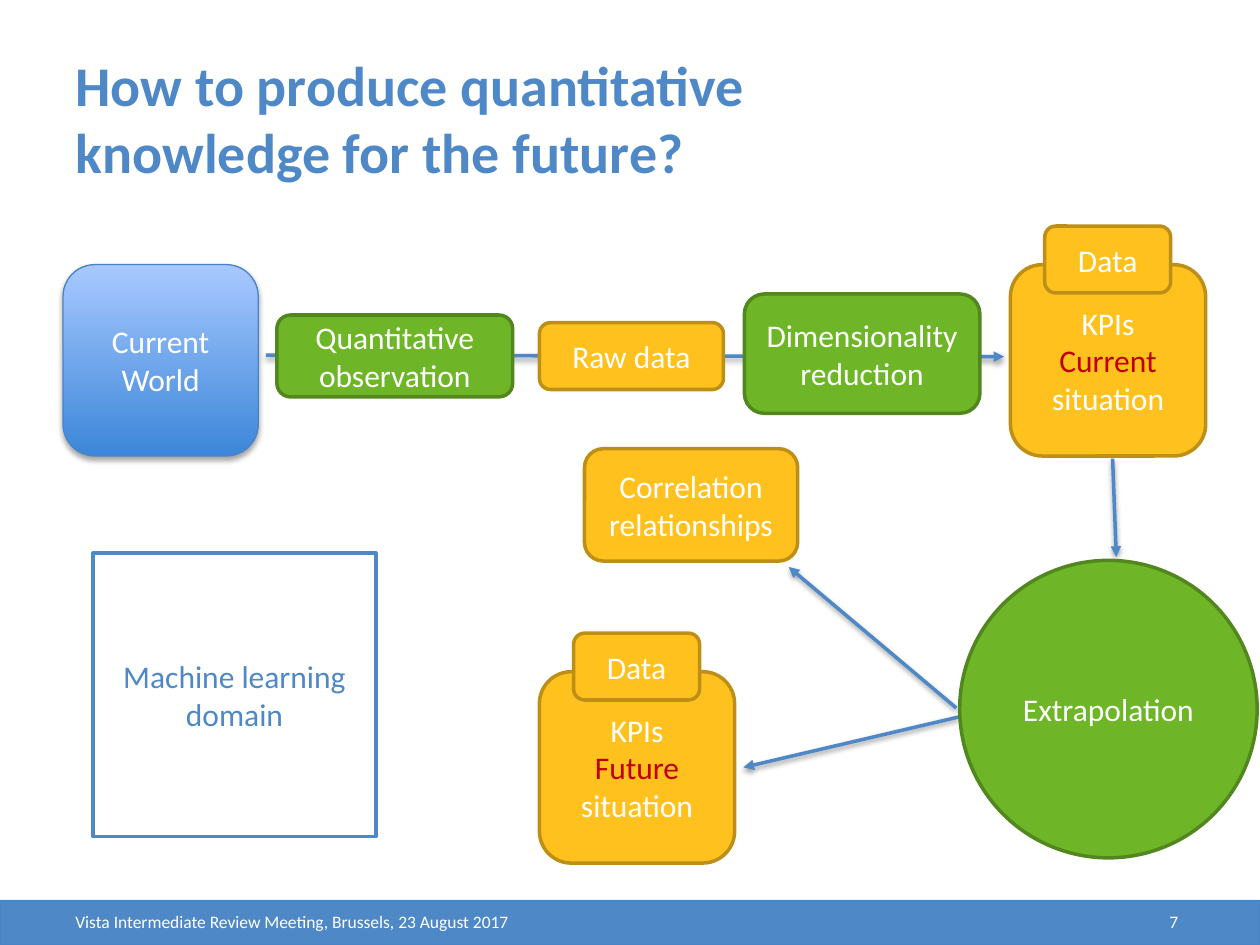
"""Build the slide on producing quantitative knowledge for the future."""
from dataclasses import dataclass

from lxml import etree
from pptx import Presentation
from pptx.dml.color import RGBColor
from pptx.enum.shapes import MSO_CONNECTOR, MSO_SHAPE
from pptx.enum.text import MSO_ANCHOR, PP_ALIGN
from pptx.oxml.ns import qn
from pptx.util import Pt

RECT, ROUND, OVAL = MSO_SHAPE.RECTANGLE, MSO_SHAPE.ROUNDED_RECTANGLE, MSO_SHAPE.OVAL
STRAIGHT = MSO_CONNECTOR.STRAIGHT
LEFT, CENTER, RIGHT = PP_ALIGN.LEFT, PP_ALIGN.CENTER, PP_ALIGN.RIGHT
MIDDLE = MSO_ANCHOR.MIDDLE

BLUE, BLUE_EDGE, WHITE, RED = "4E88C7", "4985C6", "FFFFFF", "C00000"
GREEN, GREEN_EDGE = "6EB628", "51871E"
AMBER, AMBER_EDGE = "FFC11E", "BD8F16"
WORLD_STOPS = ("3C87D9", "A8C8FF")


@dataclass
class Box:
    """A labelled shape, with an optional accented word."""
    at: tuple[float, float, float, float]
    text: str = ""
    fill: str | tuple[str, str] = AMBER
    edge: str = AMBER_EDGE
    kind: int = ROUND
    color: str = WHITE
    accent: str = ""
    weight: float = 2
    shadow: bool = False


@dataclass
class Arrow:
    """A straight arrow between two points."""
    start: tuple[float, float]
    end: tuple[float, float]


def rgb(value: str) -> RGBColor:
    """Turn a hex string into a colour."""
    return RGBColor.from_string(value)


def add_run(p, text: str, color: str, size: float, bold: bool = False) -> None:
    """Append a formatted run to a paragraph."""
    r = p.add_run()
    r.text = text
    for name, value in {"name": "Calibri", "size": Pt(size), "bold": bold}.items():
        setattr(r.font, name, value)
    r.font.color.rgb = rgb(color)


def add_shadow(effects, alpha: int, dist: float) -> None:
    """Put a soft downward shadow in an effect list."""
    shadow = etree.SubElement(effects, qn("a:outerShdw"), blurRad=str(Pt(3.1)),
                              dist=str(Pt(dist)), dir="5400000", rotWithShape="0")
    color = etree.SubElement(shadow, qn("a:srgbClr"), val="000000")
    etree.SubElement(color, qn("a:alpha"), val=str(alpha * 1000))


def draw_box(shapes, box: Box) -> None:
    """Draw a filled shape with its centred label."""
    sp = shapes.add_shape(box.kind, *map(Pt, box.at))
    sp.shadow.inherit = False
    if isinstance(box.fill, str):
        sp.fill.solid()
        sp.fill.fore_color.rgb = rgb(box.fill)
    else:
        sp.fill.gradient()
        sp.fill.gradient_angle = 90
        for stop, color in zip(sp.fill.gradient_stops, box.fill):
            stop.color.rgb = rgb(color)
    sp.line.color.rgb = rgb(box.edge)
    sp.line.width = Pt(box.weight)
    if box.shadow:
        add_shadow(sp._element.spPr.find(qn("a:effectLst")), 35, 1.8)
    if not box.text:
        return
    tf = sp.text_frame
    tf.word_wrap, tf.vertical_anchor = True, MIDDLE
    for i, line in enumerate(box.text.split("\n")):
        p = tf.add_paragraph() if i else tf.paragraphs[0]
        p.alignment = CENTER
        if box.accent and line.startswith(box.accent):
            add_run(p, box.accent, RED, 18)
            line = line.removeprefix(box.accent)
        add_run(p, line, box.color, 18)


def draw_arrow(shapes, arrow: Arrow) -> None:
    """Draw a blue arrow with a shadow."""
    cxn = shapes.add_connector(STRAIGHT, *map(Pt, arrow.start + arrow.end))
    cxn.line.color.rgb = rgb(BLUE)
    cxn.line.width = Pt(2)
    etree.SubElement(cxn.line._get_or_add_ln(), qn("a:tailEnd"), type="triangle")
    add_shadow(etree.SubElement(cxn._element.spPr, qn("a:effectLst")), 38, 1.6)


def draw_footer(shapes, text: str, left: float, width: float, align: int) -> None:
    """Write a line of text on the footer bar."""
    tf = shapes.add_textbox(*map(Pt, (left, 516.2, width, 20.2))).text_frame
    tf.word_wrap, tf.vertical_anchor = True, MIDDLE
    tf.paragraphs[0].alignment = align
    add_run(tf.paragraphs[0], text, WHITE, 10)


def kpi_boxes(x: float, y: float, period: str) -> list[Box]:
    """Return a KPI box and the data tab on its top edge."""
    return [Box((x, y, 111.6, 109.4), f"KPIs\n{period} situation", accent=period),
            Box((x + 19.6, y - 22, 72, 38.2), "Data")]


ARROWS = [
    Arrow((151.9, 203), (573.8, 203.8)),
    Arrow((635.8, 262.1), (637.9, 318.2)),
    Arrow((547.9, 409.7), (424.8, 438.5)),
    Arrow((546.5, 404.6), (450.7, 324)),
]
BOXES = [
    Box((36, 151.2, 111.6, 109.4), "Current\nWorld", WORLD_STOPS, BLUE_EDGE,
        weight=0.75, shadow=True),
    *kpi_boxes(577.4, 151.2, "Current"),
    Box((548.4, 320.2, 170, 170), "Extrapolation", GREEN, GREEN_EDGE, OVAL),
    *kpi_boxes(308.2, 383.8, "Future"),
    Box((158.2, 180, 134.8, 46.8), "Quantitative observation", GREEN, GREEN_EDGE),
    Box((53.2, 316, 161.6, 162), "Machine learning domain", WHITE, BLUE, RECT, BLUE),
    Box((308.2, 184.4, 105.2, 38.2), "Raw data"),
    Box((425.4, 168, 134.6, 68.2), "Dimensionality reduction", GREEN, GREEN_EDGE),
    Box((334, 256.4, 121.8, 64.2), "Correlation relationships"),
]


def main() -> None:
    """Assemble and save the slide."""
    prs = Presentation()
    prs.slide_width, prs.slide_height = Pt(720), Pt(540)
    shapes = prs.slides.add_slide(prs.slide_layouts[5]).shapes
    title = shapes.title
    frame = {"left": 36, "top": 22.3, "width": 524.2, "height": 90}
    for name, value in frame.items():
        setattr(title, name, Pt(value))
    title.text_frame.vertical_anchor = MIDDLE
    p = title.text_frame.paragraphs[0]
    p.alignment = LEFT
    add_run(p, "How to produce quantitative knowledge for the future?", BLUE, 32, True)

    draw_box(shapes, Box((0, 514.8, 720, 25.2), fill=BLUE, edge=BLUE_EDGE, kind=RECT,
                         weight=0.75, shadow=True))
    draw_footer(shapes, "Vista Intermediate Review Meeting, Brussels, 23 August 2017",
                36, 306.7, LEFT)
    draw_footer(shapes, "7", 512.6, 167.8, RIGHT)
    for arrow in ARROWS:
        draw_arrow(shapes, arrow)
    for box in BOXES:
        draw_box(shapes, box)
    prs.save("out.pptx")


if __name__ == "__main__":
    main()
